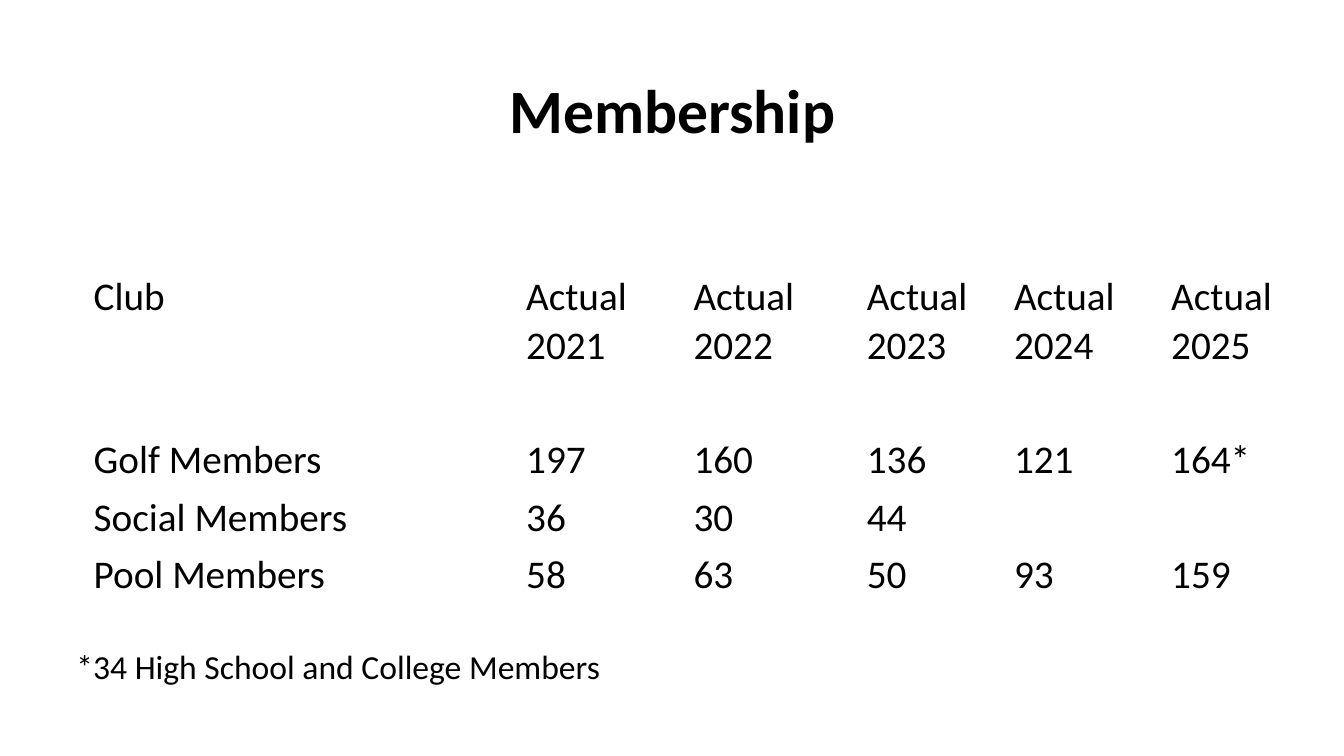
from lxml import etree
from pptx import Presentation
from pptx import util as u
from pptx.dml.color import RGBColor
from pptx.enum import text
from pptx.oxml import ns

COLORS = {"ink": "000000", "border": "FFFFFF"}
CONTENT_LEFT, CONTENT_WIDTH = 6.9, 86.27
COLUMN_WIDTHS = [32.18, 12.45, 12.9, 10.95, 11.7, 10.35]
ROW_HEIGHTS = [15.07, 5.33] + [7.6] * 4
YEARS = range(2021, 2026)
MEMBERSHIP = [
    ["Club"] + ["Actual"] * len(YEARS),
    [""] + [str(year) for year in YEARS],
    [""] * (len(YEARS) + 1),
    ["Golf Members", "197", "160", "136", "121", "164*"],
    ["Social Members", "36", "30", "44", "", ""],
    ["Pool Members", "58", "63", "50", "93", "159"],
]


class SlideBuilder:
    font_name = "Calibri"
    grid = 100

    def __init__(self, presentation):
        self.presentation = presentation
        self.slide = presentation.slides.add_slide(presentation.slide_layouts[6])

    def across(self, columns):
        return round(self.presentation.slide_width * columns / self.grid)

    def down(self, rows):
        return round(self.presentation.slide_height * rows / self.grid)

    def set_text(self, paragraph, content, size, bold=False):
        paragraph.text = content
        paragraph.font.name = self.font_name
        paragraph.font.size = u.Pt(size)
        paragraph.font.bold = bold
        paragraph.font.color.rgb = RGBColor.from_string(COLORS["ink"])

    def text_box(self, content, left, top, width, height, size,
                 bold=False, align=text.PP_ALIGN.LEFT):
        shape = self.slide.shapes.add_textbox(
            self.across(left), self.down(top), self.across(width), self.down(height))
        frame = shape.text_frame
        frame.word_wrap = True
        frame.vertical_anchor = text.MSO_ANCHOR.MIDDLE
        paragraph = frame.paragraphs[0]
        self.set_text(paragraph, content, size, bold)
        paragraph.alignment = align
        paragraph.line_spacing = 0.9

    def border(self, cell):
        properties = cell._tc.get_or_add_tcPr()
        for side in ("a:lnL", "a:lnR", "a:lnT", "a:lnB"):
            line = etree.SubElement(properties, ns.qn(side), w=str(u.Pt(1)))
            fill = etree.SubElement(line, ns.qn("a:solidFill"))
            etree.SubElement(fill, ns.qn("a:srgbClr"), val=COLORS["border"])

    def table(self, values, left, top, widths, heights, size):
        table = self.slide.shapes.add_table(
            len(heights), len(widths), self.across(left), self.down(top),
            self.across(sum(widths)), self.down(sum(heights))).table
        table.first_row = table.horz_banding = False
        for column, width in zip(table.columns, widths):
            column.width = self.across(width)
        for row, height, contents in zip(table.rows, heights, values):
            row.height = self.down(height)
            for cell, content in zip(row.cells, contents):
                self.border(cell)
                cell.fill.background()
                cell.margin_left = cell.margin_right = cell.margin_top = u.Inches(0.01)
                cell.margin_bottom = 0
                cell.vertical_anchor = text.MSO_ANCHOR.BOTTOM
                self.set_text(cell.text_frame.paragraphs[0], content, size)


def main():
    presentation = Presentation()
    presentation.slide_width = u.Inches(13.33)
    presentation.slide_height = u.Inches(7.5)
    builder = SlideBuilder(presentation)
    builder.text_box("Membership", CONTENT_LEFT, 5.33, CONTENT_WIDTH, 19.33, 44,
                     bold=True, align=text.PP_ALIGN.CENTER)
    builder.table(MEMBERSHIP, CONTENT_LEFT, 27.47, COLUMN_WIDTHS, ROW_HEIGHTS, 28)
    builder.text_box("*34 High School and College Members",
                     4.95, 83.87, CONTENT_WIDTH, 9.07, 24)
    presentation.save("out.pptx")


if __name__ == "__main__":
    main()
